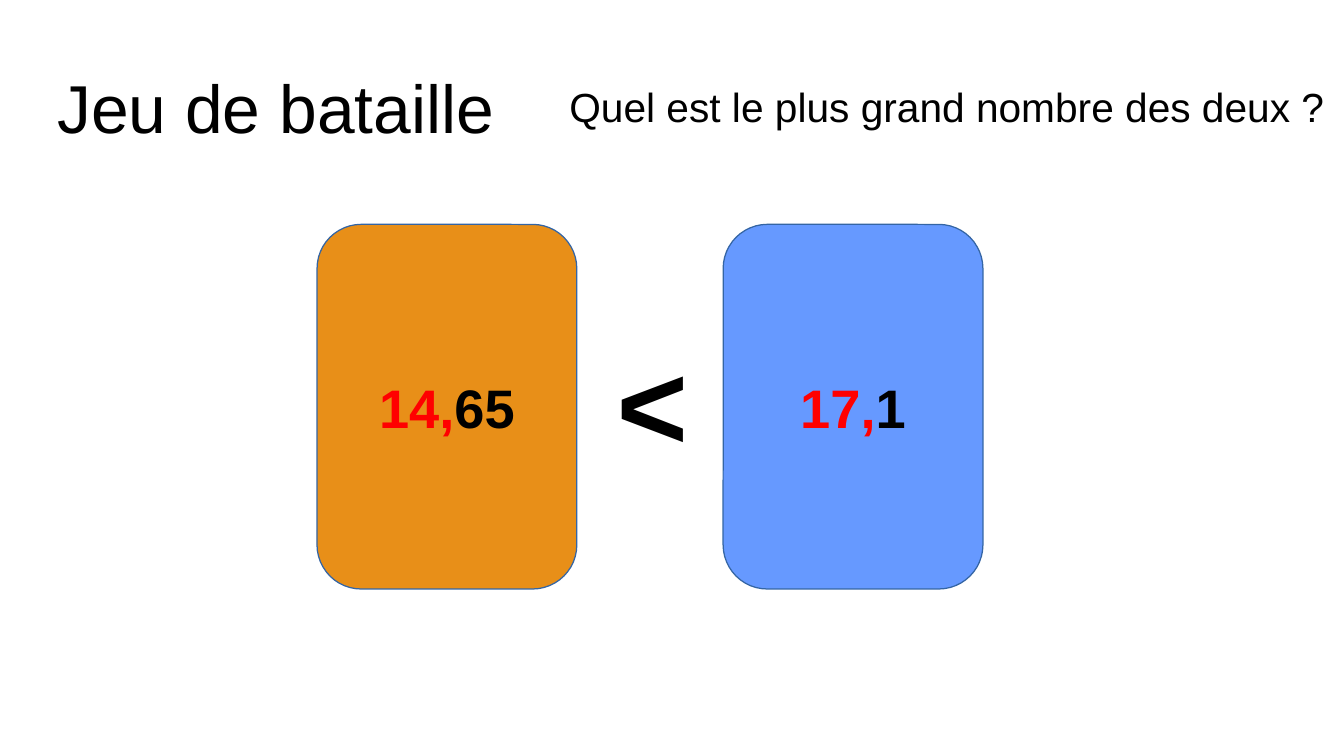
from pptx import Presentation
from pptx.dml.color import RGBColor
from pptx.enum import shapes, text
from pptx.util import Inches, Pt

# Content: (text, left, top, width, height, size key, bold, alignment, rotation)
CENTER, LEFT = text.PP_ALIGN.CENTER, text.PP_ALIGN.LEFT
LABELS = [
    ("Jeu de bataille", -0.12, 0.49, 4.76, 0.72, "title", False, CENTER, 0),
    ("Quel est le plus grand nombre des deux ?", 4.57, 0.62, 7.01, 0.61,
     "question", False, LEFT, 0),
    (">", 4.88, 2.86, 0.94, 1.22, "sign", True, CENTER, 180),
]
# Cards: (whole part, decimals, fill key)
CARDS = [("14,", "65", "orange"), ("17,", "1", "blue")]

THEME = {
    "font": "Arial",
    "size": {"title": 40, "question": 24, "number": 32, "sign": 72},
    "color": {"ink": "000000", "whole": "FF0000", "orange": "E88F18",
              "blue": "6699FF", "outline": "3465A4"},
}
CARD_LEFT, CARD_TOP, CARD_W, CARD_H = 2.6, 1.84, 2.13, 2.99
CARD_PITCH = 3.33
CORNER = 0.17


def color(key):
    return RGBColor.from_string(THEME["color"][key])


def style(p, size, bold, align):
    p.alignment = align
    p.font.name = THEME["font"]
    p.font.size = Pt(THEME["size"][size])
    p.font.bold = bold
    p.font.color.rgb = color("ink")


prs = Presentation()
prs.slide_width, prs.slide_height = Inches(11.02), Inches(6.2)
s = prs.slides.add_slide(prs.slide_layouts[6])

# Cards, evenly spaced
for i, (whole, decimals, fill) in enumerate(CARDS):
    sp = s.shapes.add_shape(
        shapes.MSO_SHAPE.ROUNDED_RECTANGLE,
        Inches(CARD_LEFT + i * CARD_PITCH), Inches(CARD_TOP),
        Inches(CARD_W), Inches(CARD_H))
    sp.adjustments[0] = CORNER
    sp.shadow.inherit = False
    sp.fill.solid()
    sp.fill.fore_color.rgb = color(fill)
    sp.line.color.rgb = color("outline")
    sp.line.width = Pt(0.75)
    tf = sp.text_frame
    tf.word_wrap = False
    tf.vertical_anchor = text.MSO_ANCHOR.MIDDLE
    p = tf.paragraphs[0]
    style(p, "number", True, CENTER)
    for part, ink in ((whole, "whole"), (decimals, "ink")):
        r = p.add_run()
        r.text = part
        r.font.color.rgb = color(ink)

# Title, question and comparison sign
for words, left, top, width, height, size, bold, align, rotation in LABELS:
    sp = s.shapes.add_textbox(Inches(left), Inches(top),
                              Inches(width), Inches(height))
    sp.rotation = rotation
    tf = sp.text_frame
    tf.word_wrap = True
    p = tf.paragraphs[0]
    p.text = words
    style(p, size, bold, align)

prs.save("out.pptx")
